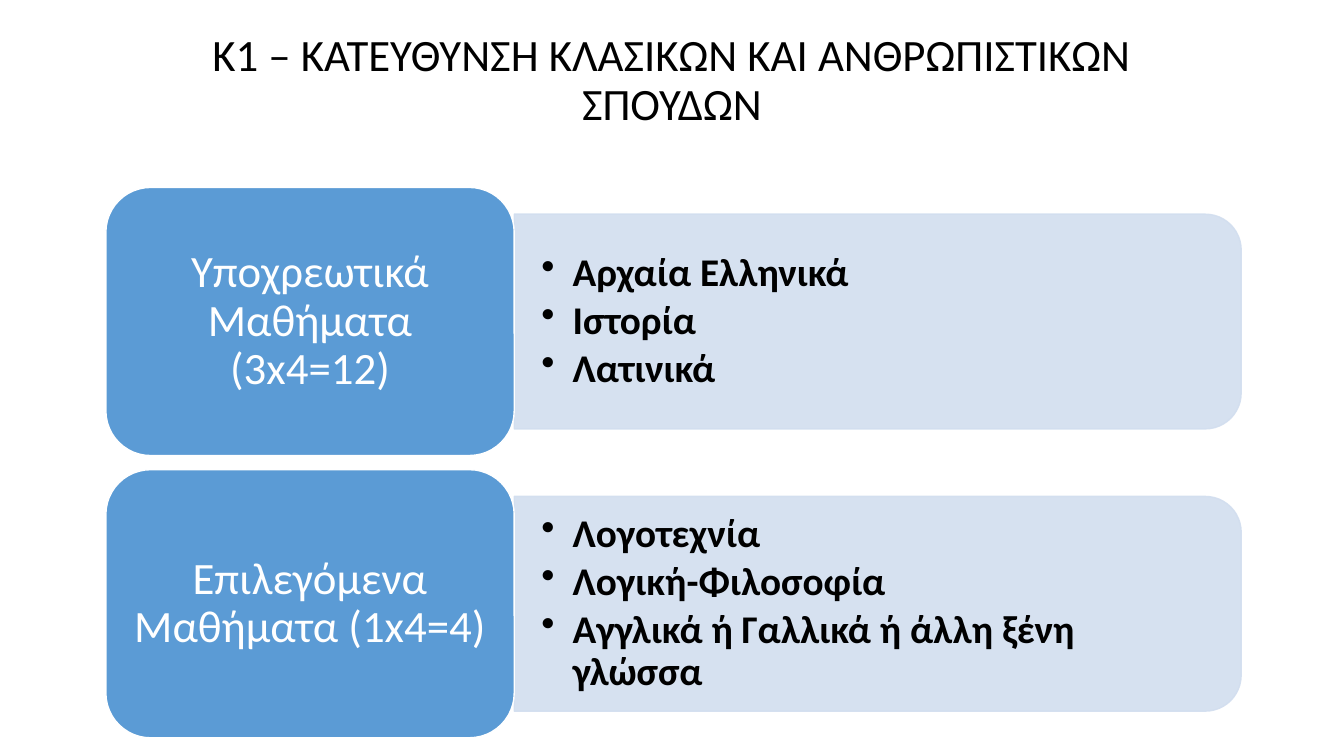
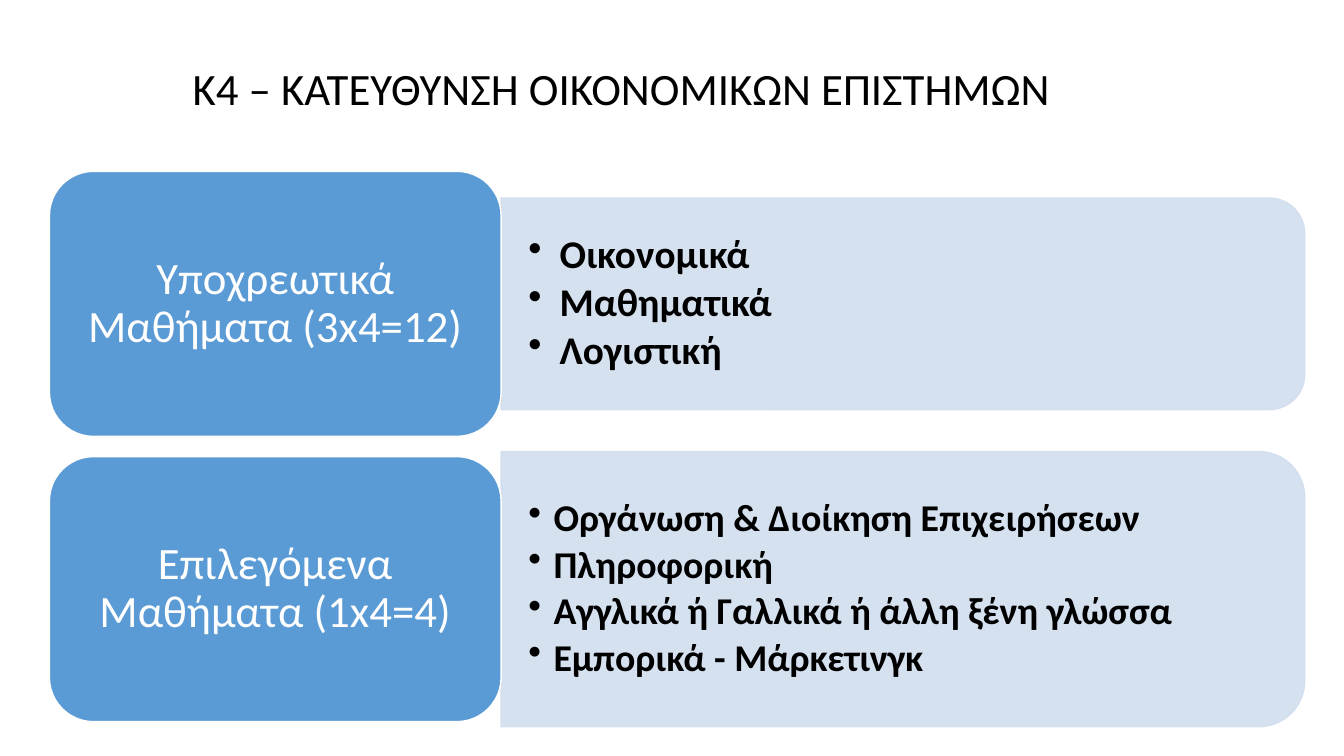
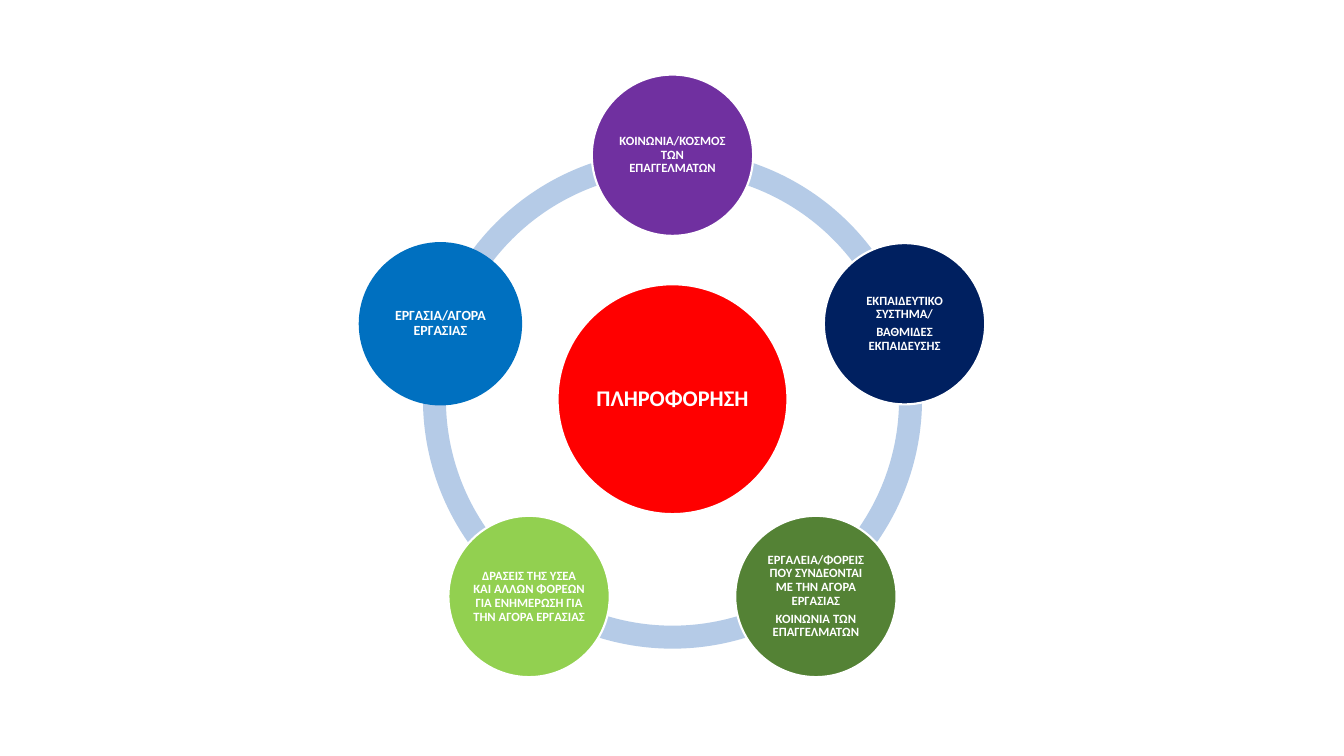
from math import cos, radians, sin

from lxml.etree import SubElement
from pptx import Presentation
from pptx.dml.color import RGBColor
from pptx.enum.shapes import MSO_SHAPE
from pptx.enum.text import MSO_ANCHOR, MSO_AUTO_SIZE, PP_ALIGN
from pptx.oxml.ns import qn
from pptx.util import Inches, Pt

COLORS = {
    "black": "000000",
    "white": "FFFFFF",
    "label": "5B9BD5",
    "panel": "D2DEEF",
    "ring": "B5CBE7",
    "red": "FF0000",
    "purple": "7030A0",
    "navy": "002060",
    "green": "548235",
    "lime": "92D050",
    "blue": "0070C0",
}


def add_filled(slide, kind, box, fill, line=None, line_width=1):
    shape = slide.shapes.add_shape(kind, *[Inches(length) for length in box])
    shape.shadow.inherit = False
    shape.fill.solid()
    shape.fill.fore_color.rgb = RGBColor.from_string(COLORS[fill])
    if line:
        shape.line.color.rgb = RGBColor.from_string(COLORS[line])
        shape.line.width = Pt(line_width)
    else:
        shape.line.fill.background()
    return shape


def write_text(shape, lines, size, color, bold=False, margins=(0.1, 0.05), space=0, indent=0):
    frame = shape.text_frame
    frame.text = "\n".join(lines)
    frame.word_wrap = True
    frame.auto_size = MSO_AUTO_SIZE.NONE
    frame.vertical_anchor = MSO_ANCHOR.MIDDLE
    frame.margin_left = frame.margin_right = Inches(margins[0])
    frame.margin_top = frame.margin_bottom = Inches(margins[1])
    for paragraph in frame.paragraphs:
        paragraph.alignment = PP_ALIGN.LEFT if indent else PP_ALIGN.CENTER
        paragraph.line_spacing = 0.9
        paragraph.space_after = Pt(space)
        if indent:
            properties = paragraph._p.get_or_add_pPr()
            properties.set("marL", str(Inches(indent)))
            properties.set("indent", str(-Inches(indent)))
            SubElement(properties, qn("a:buChar")).set("char", "•")
        paragraph.font.name = "Calibri"
        paragraph.font.size = Pt(size)
        paragraph.font.bold = bold
        paragraph.font.color.rgb = RGBColor.from_string(COLORS[color])


presentation = Presentation()
presentation.slide_width = Inches(13.33)
presentation.slide_height = Inches(7.5)

directions = [
    {
        "title": "Κ1 – ΚΑΤΕΥΘΥΝΣΗ ΚΛΑΣΙΚΩΝ ΚΑΙ ΑΝΘΡΩΠΙΣΤΙΚΩΝ ΣΠΟΥΔΩΝ",
        "title_box": (1.25, 0, 10.83, 1.62),
        "label_box": (1.05, 1.86, 4.05, 2.66),
        "gap": 0.14,
        "panel_width": 7.21,
        "rows": [
            ("Υποχρεωτικά Μαθήματα (3x4=12)", 2.13, 28, 0.31,
             ["Αρχαία Ελληνικά", "Ιστορία", "Λατινικά"]),
            ("Επιλεγόμενα Μαθήματα (1x4=4)", 2.13, 28, 0.31,
             ["Λογοτεχνία", "Λογική-Φιλοσοφία", "Αγγλικά ή Γαλλικά ή άλλη ξένη γλώσσα"]),
        ],
    },
    {
        "title": "Κ4 – ΚΑΤΕΥΘΥΝΣΗ ΟΙΚΟΝΟΜΙΚΩΝ ΕΠΙΣΤΗΜΩΝ",
        "title_box": (0.24, 0.09, 11.85, 1.62),
        "label_box": (0.49, 1.7, 4.48, 2.63),
        "gap": 0.2,
        "panel_width": 7.97,
        "rows": [
            ("Υποχρεωτικά Μαθήματα (3x4=12)", 2.1, 28, 0.31,
             ["Οικονομικά", "Μαθηματικά", "Λογιστική"]),
            ("Επιλεγόμενα Μαθήματα (1x4=4)", 2.73, 27, 0.25,
             ["Οργάνωση & Διοίκηση Επιχειρήσεων", "Πληροφορική",
              "Αγγλικά ή Γαλλικά ή άλλη ξένη γλώσσα", "Εμπορικά - Μάρκετινγκ"]),
        ],
    },
]

for direction in directions:
    slide = presentation.slides.add_slide(presentation.slide_layouts[5])
    title = slide.shapes.title
    title.left, title.top, title.width, title.height = [
        Inches(length) for length in direction["title_box"]
    ]
    write_text(title, [direction["title"]], 32, "black")

    left, first_top, width, height = direction["label_box"]
    panel_left = left + width
    panel_width = direction["panel_width"]
    for row, (label_text, panel_height, size, indent, subjects) in enumerate(direction["rows"]):
        top = first_top + row * (height + direction["gap"])
        middle = top + height / 2
        panel_box = (
            panel_left + (panel_width - panel_height) / 2,
            middle - panel_width / 2,
            panel_height,
            panel_width,
        )
        panel = add_filled(slide, MSO_SHAPE.ROUND_2_SAME_RECTANGLE, panel_box, "panel", "panel")
        panel.rotation = 90
        for color in panel._element.spPr.iter(qn("a:srgbClr")):
            SubElement(color, qn("a:alpha")).set("val", "90000")

        list_height = panel_height - 0.22
        subject_list = slide.shapes.add_textbox(
            Inches(panel_left), Inches(middle - list_height / 2),
            Inches(panel_width - 0.11), Inches(list_height),
        )
        write_text(subject_list, subjects, size, "black", True, (0.27, 0.14), 4, indent)

        label = add_filled(
            slide, MSO_SHAPE.ROUNDED_RECTANGLE, (left, top, width, height), "label", "white"
        )
        write_text(label, [label_text], 32, "white", margins=(0.13, 0.07))

slide = presentation.slides.add_slide(presentation.slide_layouts[6])
center_x, center_y = 6.67, 3.96
ring_size, hub_size, node_size = 4.95, 2.28, 1.6
orbit = 2.42
nodes = [
    ("purple", "white", 9, ["ΚΟΙΝΩΝΙΑ/ΚΟΣΜΟΣ ΤΩΝ ΕΠΑΓΓΕΛΜΑΤΩΝ"]),
    ("navy", "white", 9, ["ΕΚΠΑΙΔΕΥΤΙΚΟ ΣΥΣΤΗΜΑ/", "ΒΑΘΜΙΔΕΣ ΕΚΠΑΙΔΕΥΣΗΣ"]),
    ("green", "white", 9, ["ΕΡΓΑΛΕΙΑ/ΦΟΡΕΙΣ ΠΟΥ ΣΥΝΔΕΟΝΤΑΙ ΜΕ ΤΗΝ ΑΓΟΡΑ ΕΡΓΑΣΙΑΣ",
                           "ΚΟΙΝΩΝΙΑ ΤΩΝ ΕΠΑΓΓΕΛΜΑΤΩΝ"]),
    ("lime", "white", 9, ["ΔΡΑΣΕΙΣ ΤΗΣ ΥΣΕΑ ΚΑΙ ΑΛΛΩΝ ΦΟΡΕΩΝ ΓΙΑ ΕΝΗΜΕΡΩΣΗ ΓΙΑ ΤΗΝ ΑΓΟΡΑ ΕΡΓΑΣΙΑΣ"]),
    ("blue", "blue", 10, ["ΕΡΓΑΣΙΑ/ΑΓΟΡΑ ΕΡΓΑΣΙΑΣ"]),
]
step = 360 / len(nodes)
angles = [(270 + step * index) % 360 for index in range(len(nodes))]

ring_box = (center_x - ring_size / 2, center_y - ring_size / 2, ring_size, ring_size)
for angle in angles:
    arc = add_filled(slide, MSO_SHAPE.BLOCK_ARC, ring_box, "ring")
    arc.adjustments[0] = angle * 0.6
    arc.adjustments[1] = (angle + step) % 360 * 0.6
    arc.adjustments[2] = 0.046

hub_box = (center_x - hub_size / 2, center_y - hub_size / 2, hub_size, hub_size)
hub = add_filled(slide, MSO_SHAPE.OVAL, hub_box, "red", "white", 1.5)
write_text(hub, ["ΠΛΗΡΟΦΟΡΗΣΗ"], 16, "white", True, (0.02, 0.02))

for angle, (fill, line, size, lines) in zip(angles, nodes):
    node_box = (
        center_x + orbit * cos(radians(angle)) - node_size / 2,
        center_y + orbit * sin(radians(angle)) - node_size / 2,
        node_size,
        node_size,
    )
    node = add_filled(slide, MSO_SHAPE.OVAL, node_box, fill, line, 1.5)
    write_text(node, lines, size, "white", True, (0.01, 0.01), 3)

presentation.save("out.pptx")
